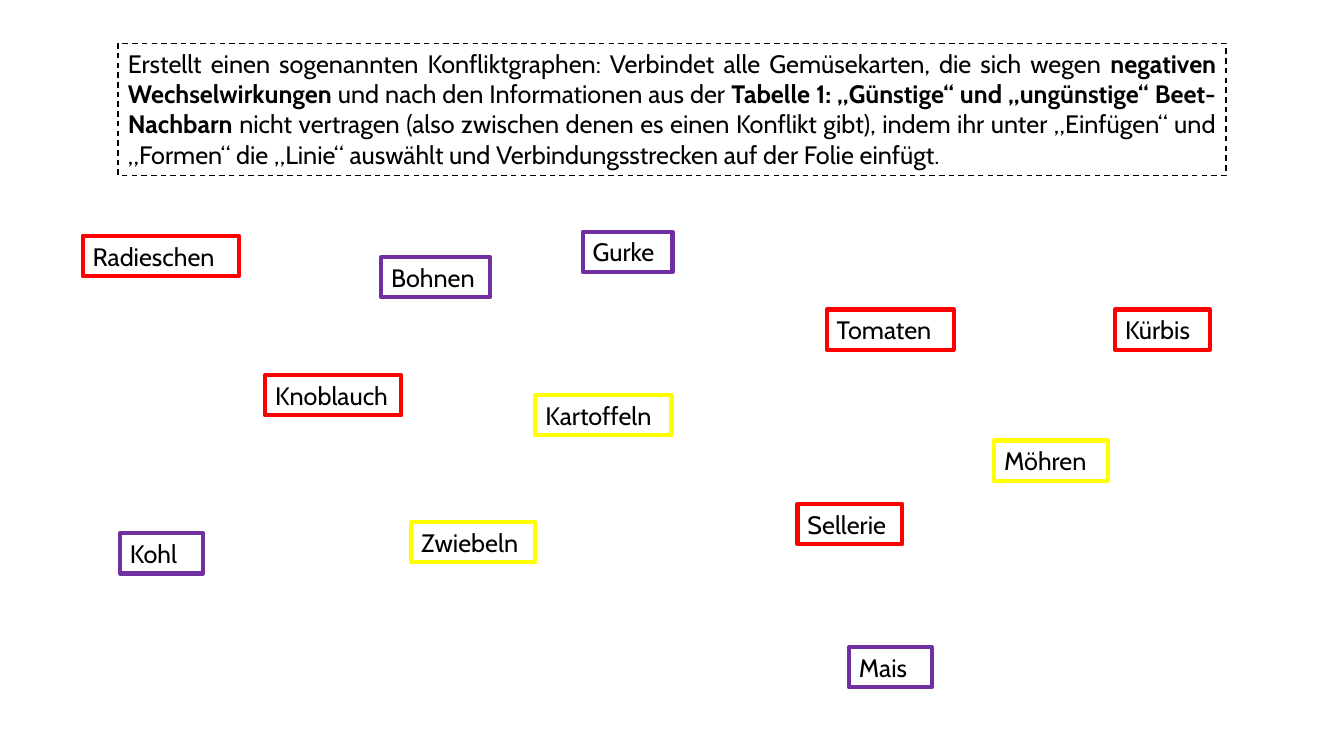
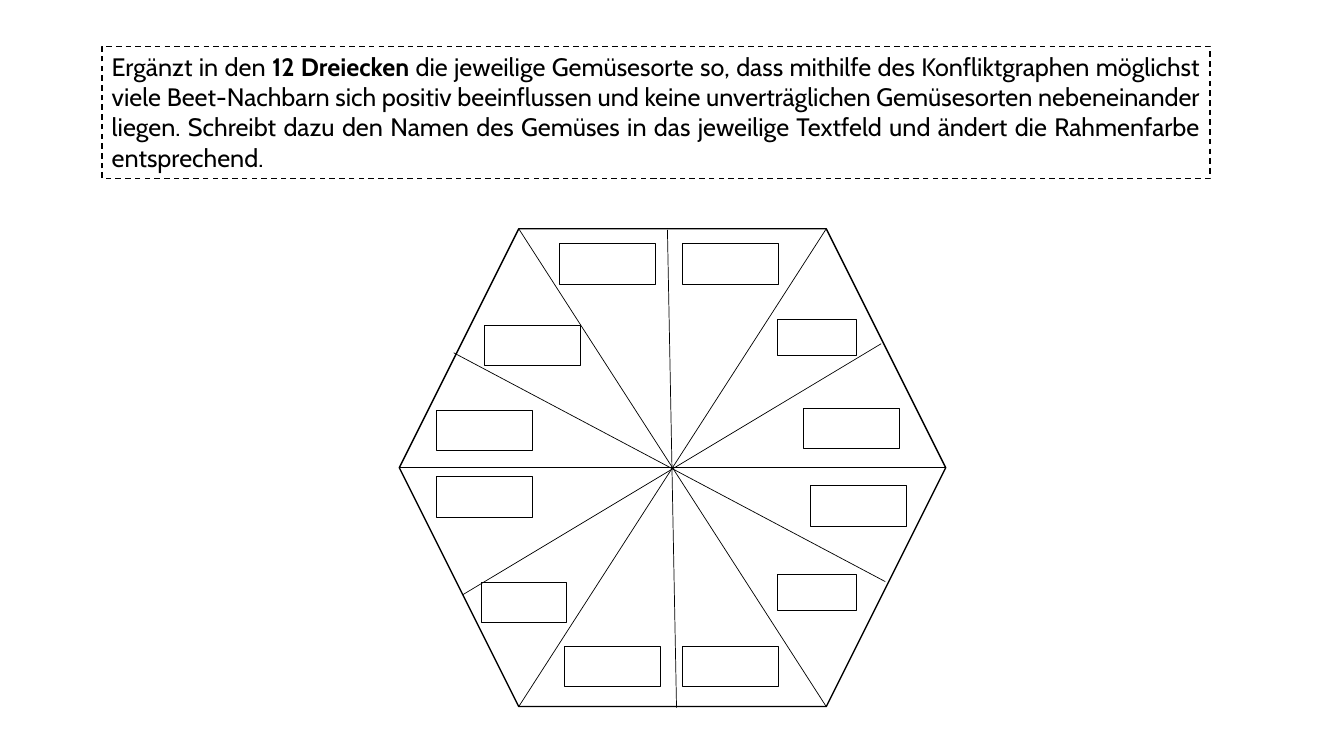
from pptx import Presentation
from pptx.dml.color import RGBColor
from pptx.enum.dml import MSO_LINE
from pptx.enum.shapes import MSO_CONNECTOR, MSO_SHAPE
from pptx.enum.text import MSO_AUTO_SIZE, PP_ALIGN
from pptx.oxml.ns import qn
from pptx.util import Inches, Pt
from lxml.etree import SubElement

COLORS = {
    "black": "000000",
    "white": "FFFFFF",
    "yellow": "FFFF00",
    "red": "FF0000",
    "purple": "7030A0",
}


class Deck:
    font = "Cabin"
    size = Pt(18)
    box_height = 0.4

    def __init__(self):
        self.prs = Presentation()
        self.prs.slide_width = Inches(13.33)
        self.prs.slide_height = Inches(7.5)
        self.s = None

    def new_slide(self):
        self.s = self.prs.slides.add_slide(self.prs.slide_layouts[6])

    def outline(self, sp, color, width):
        sp.line.color.rgb = RGBColor.from_string(COLORS[color])
        sp.line.width = Pt(width)

    def box(self, left, top, width, height, color="black", line=0.75):
        sp = self.s.shapes.add_textbox(*map(Inches, (left, top, width, height)))
        self.outline(sp, color, line)
        return sp

    def add_text(self, sp, runs):
        tf = sp.text_frame
        tf.word_wrap = True
        tf.auto_size = MSO_AUTO_SIZE.SHAPE_TO_FIT_TEXT
        p = tf.paragraphs[0]
        p.font.name = self.font
        p.font.size = self.size
        p.font.color.rgb = RGBColor.from_string(COLORS["black"])
        for text, bold in runs:
            r = p.add_run()
            r.text = text
            if bold:
                r.font.bold = True
        return p

    def task(self, left, top, runs):
        sp = self.box(left, top, 10.99, 1.31, line=1)
        sp.line.dash_style = MSO_LINE.DASH
        self.add_text(sp, runs).alignment = PP_ALIGN.JUSTIFY

    def card(self, name, color, left, top, width):
        sp = self.box(left, top, width, self.box_height, color, 3)
        self.add_text(sp, [(name, False)])

    def hexagon(self, left, top, width, height):
        sp = self.s.shapes.add_shape(
            MSO_SHAPE.HEXAGON, *map(Inches, (left, top, width, height)))
        sp.shadow.inherit = False
        sp.fill.solid()
        sp.fill.fore_color.rgb = RGBColor.from_string(COLORS["white"])
        self.outline(sp, "black", 1)

    def line(self, x1, y1, x2, y2):
        sp = self.s.shapes.add_connector(
            MSO_CONNECTOR.STRAIGHT, *map(Inches, (x1, y1, x2, y2)))
        self.outline(sp, "black", 0.5)
        SubElement(sp._element.spPr, qn("a:effectLst"))


def conflict_graph(deck):
    deck.new_slide()
    cards = {
        "yellow": [("Zwiebeln", 4.08, 5.18, 1.23), ("Kartoffeln", 5.31, 3.92, 1.35),
                   ("Möhren", 9.86, 4.37, 1.13)],
        "red": [("Radieschen", 0.82, 2.34, 1.55), ("Sellerie", 7.91, 5, 1.04),
                ("Tomaten", 8.2, 3.07, 1.26), ("Kürbis", 11.06, 3.07, 0.94),
                ("Knoblauch", 2.63, 3.72, 1.35)],
        "purple": [("Gurke", 5.78, 2.3, 0.89), ("Bohnen", 3.78, 2.55, 1.08),
                   ("Kohl", 1.19, 5.29, 0.82), ("Mais", 8.42, 6.42, 0.82)],
    }
    for color, group in cards.items():
        for name, left, top, width in group:
            deck.card(name, color, left, top, width)
    deck.task(1.17, 0.43, [
        ("Erstellt einen sogenannten Konfliktgraphen: Verbindet alle Gemüsekarten, "
         "die sich wegen ", False),
        ("negativen Wechselwirkungen", True),
        (" und nach den Informationen aus der ", False),
        ("Tabelle 1: „Günstige“ und „ungünstige“ Beet-Nachbarn ", True),
        ("nicht vertragen (also zwischen denen es einen Konflikt gibt), indem ihr "
         "unter „Einfügen“ und „Formen“ die „Linie“ auswählt und "
         "Verbindungsstrecken auf der Folie einfügt.", False),
    ])


def planting_bed(deck):
    deck.new_slide()
    left, top, width, height = 3.96, 2.27, 5.42, 4.74
    right, bottom, middle = left + width, top + height, top + height / 2
    corner_left, corner_right = left + height / 4, right - height / 4
    deck.hexagon(left, top, width, height)
    dividers = [
        (corner_left, top, corner_right, bottom),
        (left, middle, right, middle),
        (corner_left, bottom, corner_right, top),
        (4.5, 3.5, 8.78, 5.77),
        (4.59, 5.9, 8.74, 3.41),
        (6.62, 2.28, 6.71, 7.02),
    ]
    for ends in dividers:
        deck.line(*ends)
    wide_fields = [
        (5.55, 2.42), (6.77, 2.42), (4.81, 3.23), (7.97, 4.05), (4.33, 4.07),
        (4.33, 4.73), (8.04, 4.82), (5.6, 6.41), (6.77, 6.41),
    ]
    for x, y in wide_fields:
        deck.box(x, y, 0.95, deck.box_height)
    deck.box(4.78, 5.78, 0.84, deck.box_height)
    for y in (3.17, 5.7):
        deck.box(7.71, y, 0.79, 0.36)
    deck.task(1.01, 0.46, [
        ("Ergänzt in den ", False),
        ("12 Dreiecken ", True),
        ("die jeweilige Gemüsesorte so, dass mithilfe des Konfliktgraphen möglichst "
         "viele Beet-Nachbarn sich positiv beeinflussen und keine unverträglichen "
         "Gemüsesorten nebeneinander liegen. Schreibt dazu den Namen des Gemüses in "
         "das jeweilige Textfeld und ändert die Rahmenfarbe entsprechend.", False),
    ])


def main():
    deck = Deck()
    conflict_graph(deck)
    planting_bed(deck)
    deck.prs.save("out.pptx")


if __name__ == "__main__":
    main()
